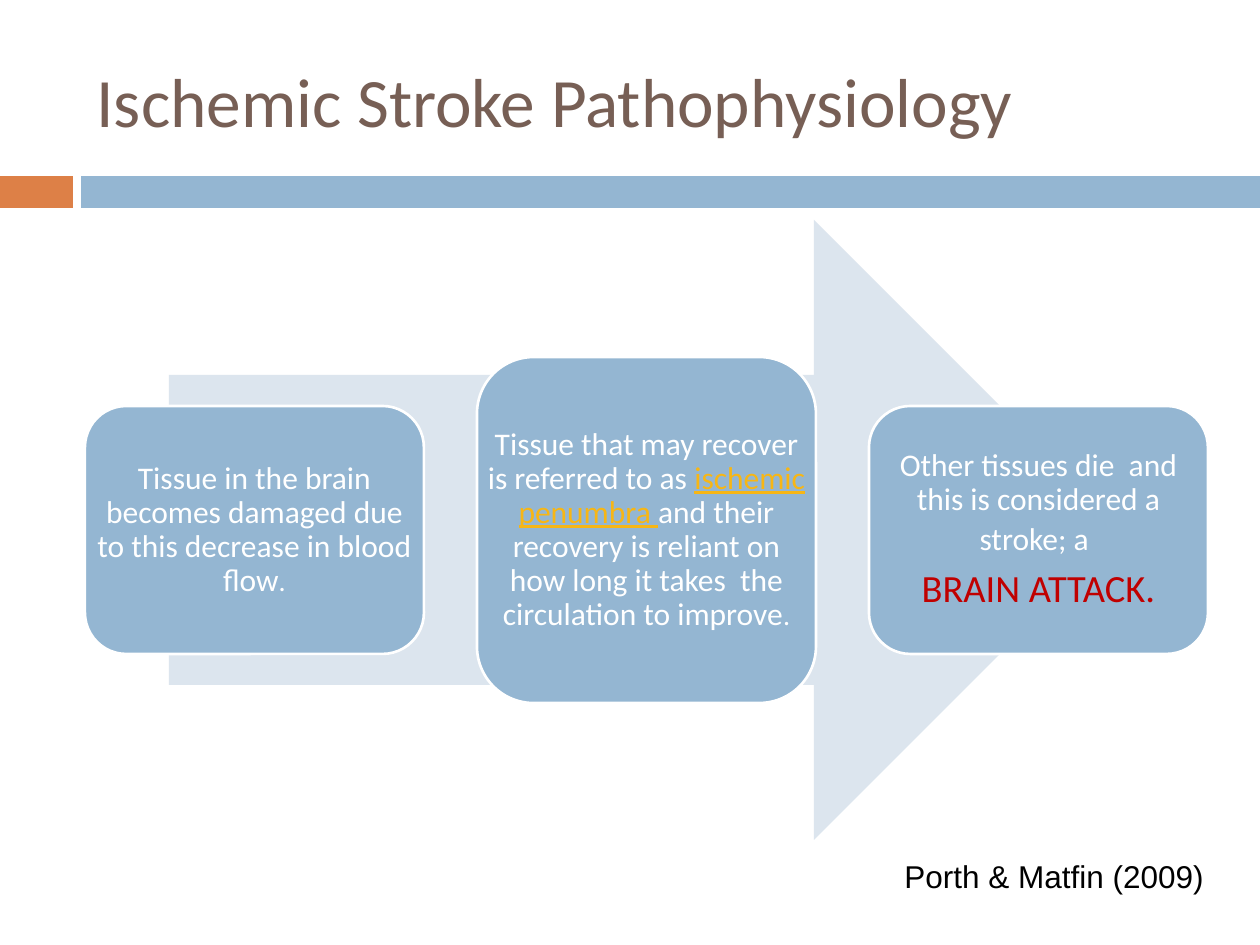
from pptx import Presentation
from pptx.dml.color import RGBColor
from pptx.enum.shapes import MSO_SHAPE
from pptx.enum.text import MSO_ANCHOR, PP_ALIGN
from pptx.util import Pt

RECTANGLE, ROUNDED = MSO_SHAPE.RECTANGLE, MSO_SHAPE.ROUNDED_RECTANGLE
ARROW = MSO_SHAPE.RIGHT_ARROW
LEFT, CENTER = PP_ALIGN.LEFT, PP_ALIGN.CENTER
MIDDLE, TOP = MSO_ANCHOR.MIDDLE, MSO_ANCHOR.TOP

WHITE = RGBColor(0xFF, 0xFF, 0xFF)
BLACK = RGBColor(0x00, 0x00, 0x00)
BROWN = RGBColor(0x77, 0x5F, 0x55)
ORANGE = RGBColor(0xDD, 0x80, 0x47)
BLUE = RGBColor(0x94, 0xB6, 0xD2)
PALE_BLUE = RGBColor(0xDC, 0xE5, 0xEE)
GOLD = RGBColor(0xF7, 0xB6, 0x15)
RED = RGBColor(0xC0, 0x00, 0x00)

PX = 914400 / 126  # EMU per pixel


def px(*lengths):
    return [round(length * PX) for length in lengths]


def write(shape, paragraphs, font="Calibri", align=LEFT, anchor=MIDDLE,
          inset=None, line_spacing=None, space_after=0):
    """Fill a shape with paragraphs, each a list of (text, size, colour, underline)."""
    frame = shape.text_frame
    frame.word_wrap = True
    frame.vertical_anchor = anchor
    if inset is not None:
        frame.margin_left = frame.margin_right = inset
        frame.margin_top = frame.margin_bottom = inset
    for index, runs in enumerate(paragraphs):
        paragraph = frame.add_paragraph() if index else frame.paragraphs[0]
        paragraph.alignment = align
        paragraph.line_spacing = line_spacing
        paragraph.space_after = Pt(space_after)
        for text, size, color, underline in runs:
            run = paragraph.add_run()
            run.text = text
            run.font.name = font
            run.font.size = Pt(size)
            run.font.color.rgb = color
            run.font.underline = underline


presentation = Presentation()
presentation.slide_width, presentation.slide_height = px(1260, 945)
slide = presentation.slides.add_slide(presentation.slide_layouts[5])
shapes = slide.shapes

title = shapes.title
title.left, title.top, title.width, title.height = px(84, 32, 1157, 136)
write(title, [[("Ischemic Stroke Pathophysiology", 39.6, BROWN, False)]])

# Title bars, arrow and step boxes, from back to front
STEP_LEFT, STEP_PITCH, STEP_WIDTH, STEP_MIDDLE = 85, 392, 339, 530
step_heights = [248, 346, 248]
step_places = [(STEP_LEFT + index * STEP_PITCH, STEP_MIDDLE - height // 2, STEP_WIDTH, height)
               for index, height in enumerate(step_heights)]
outlines = [
    (RECTANGLE, (0, 176, 73, 32), ORANGE),
    (RECTANGLE, (81, 176, 1179, 32), BLUE),
    (ARROW, (169, 220, 955, 620), PALE_BLUE),
] + [(ROUNDED, place, BLUE) for place in step_places]
for kind, place, color in outlines:
    shape = shapes.add_shape(kind, *px(*place))
    shape.shadow.inherit = False
    shape.fill.solid()
    shape.fill.fore_color.rgb = color
    if kind == ROUNDED:
        shape.line.color.rgb = WHITE
        shape.line.width = Pt(1.5)
    else:
        shape.line.fill.background()

step_texts = [
    [[("Tissue in the brain becomes damaged due to this decrease in blood flow", 18, WHITE, False),
      (".", 16, WHITE, False)]],
    [[("Tissue that may recover is referred to as ", 18, WHITE, False),
      ("ischemic penumbra ", 18, GOLD, True),
      ("and their recovery is reliant on how long it takes  the circulation to improve",
       18, WHITE, False),
      (".", 16, WHITE, False)]],
    [[("Other tissues die  and this is considered a stroke; a", 18, WHITE, False),
      (" ", 22, WHITE, False)],
     [("BRAIN ATTACK.", 22, RED, False)]],
]
for place, paragraphs in zip(step_places, step_texts):
    write(shapes.add_textbox(*px(*place)), paragraphs, align=CENTER, inset=px(9)[0],
          line_spacing=0.9, space_after=6.3)

citation = shapes.add_textbox(*px(892, 851, 347, 50))
write(citation, [[("Porth & Matfin (2009)", 18, BLACK, False)]], font="Arial", anchor=TOP)

presentation.save("out.pptx")
